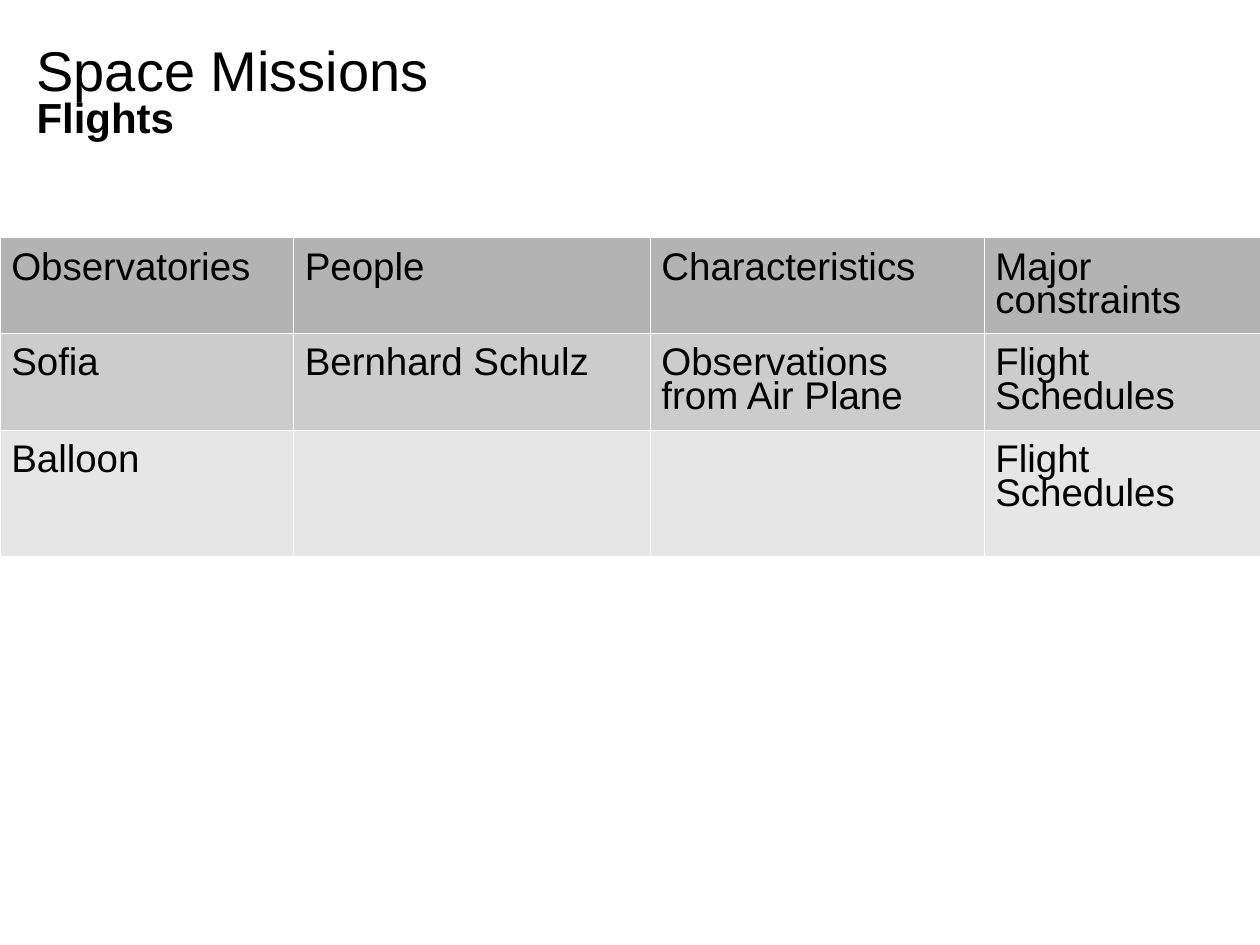
from lxml.etree import SubElement as Sub
from pptx import Presentation as Deck
from pptx.dml.color import RGBColor as Rgb
from pptx.enum.text import MSO_ANCHOR as Anchor, MSO_AUTO_SIZE as Fit, PP_ALIGN as Align
from pptx.oxml.ns import qn
from pptx.util import Pt

HUES = {"text": "000000", "line": "FFFFFF", "page": "FFFFFF",
        "head": "B3B3B3", "dark": "CCCCCC", "light": "E6E6E6"}
FONT = "Arial"
SPACING = 0.78
WIDTHS = [167.76, 203.76, 190.8, 157.68]
ROWS = [
    ("head", 54.72, ["Observatories", "People", "Characteristics", "Major constraints"]),
    ("dark", 55.44, ["Sofia", "Bernhard Schulz", "Observations from Air Plane", "Flight Schedules"]),
    ("light", 72, ["Balloon", "", "", "Flight Schedules"]),
]


def hue(name):
    return Rgb.from_string(HUES[name])


def write(para, text, size, bold=False):
    para.alignment = Align.LEFT
    para.line_spacing = SPACING
    para.space_before = Pt(0)
    run = para.add_run()
    run.text = text
    font = run.font
    font.name, font.size, font.bold = FONT, Pt(size), bold
    font.color.rgb = hue("text")


def inset(part, side, top, base):
    part.margin_left = part.margin_right = Pt(side)
    part.margin_top, part.margin_bottom = Pt(top), Pt(base)


def edge(cell):
    props = cell._tc.get_or_add_tcPr()
    for side in ("lnL", "lnR", "lnT", "lnB"):
        line = Sub(props, qn(f"a:{side}"), w=str(Pt(0.06)))
        fill = Sub(line, qn("a:solidFill"))
        Sub(fill, qn("a:srgbClr"), val=HUES["line"])


def add_head(slide, left, top, width, height):
    title = slide.shapes.title
    title.left, title.top = Pt(left), Pt(top)
    title.width, title.height = Pt(width), Pt(height)
    frame = title.text_frame
    frame.word_wrap = False
    frame.auto_size = Fit.NONE
    frame.vertical_anchor = Anchor.TOP
    inset(frame, 7.2, 10.8, 3.6)
    write(frame.paragraphs[0], "Space Missions", 32)
    write(frame.add_paragraph(), "Flights", 24, True)


def add_grid(slide, left, top, width, height):
    grid = slide.shapes.add_table(len(ROWS), len(WIDTHS), Pt(left), Pt(top),
                                  Pt(width), Pt(height)).table
    for col, size in zip(grid.columns, WIDTHS):
        col.width = Pt(size)
    for row, (tone, tall, texts) in zip(grid.rows, ROWS):
        row.height = Pt(tall)
        for cell, text in zip(row.cells, texts):
            inset(cell, 6.48, 9.36, 4.32)
            edge(cell)
            cell.fill.solid()
            cell.fill.fore_color.rgb = hue(tone)
            if text:
                write(cell.text_frame.paragraphs[0], text, 22)


def main():
    deck = Deck()
    deck.slide_width, deck.slide_height = Pt(720), Pt(540)
    slide = deck.slides.add_slide(deck.slide_layouts[5])
    slide.background.fill.solid()
    slide.background.fill.fore_color.rgb = hue("page")
    add_head(slide, 13.68, 17.28, 358.56, 72)
    add_grid(slide, 0, 135.36, sum(WIDTHS), sum(row[1] for row in ROWS))
    deck.save("out.pptx")


if __name__ == "__main__":
    main()
